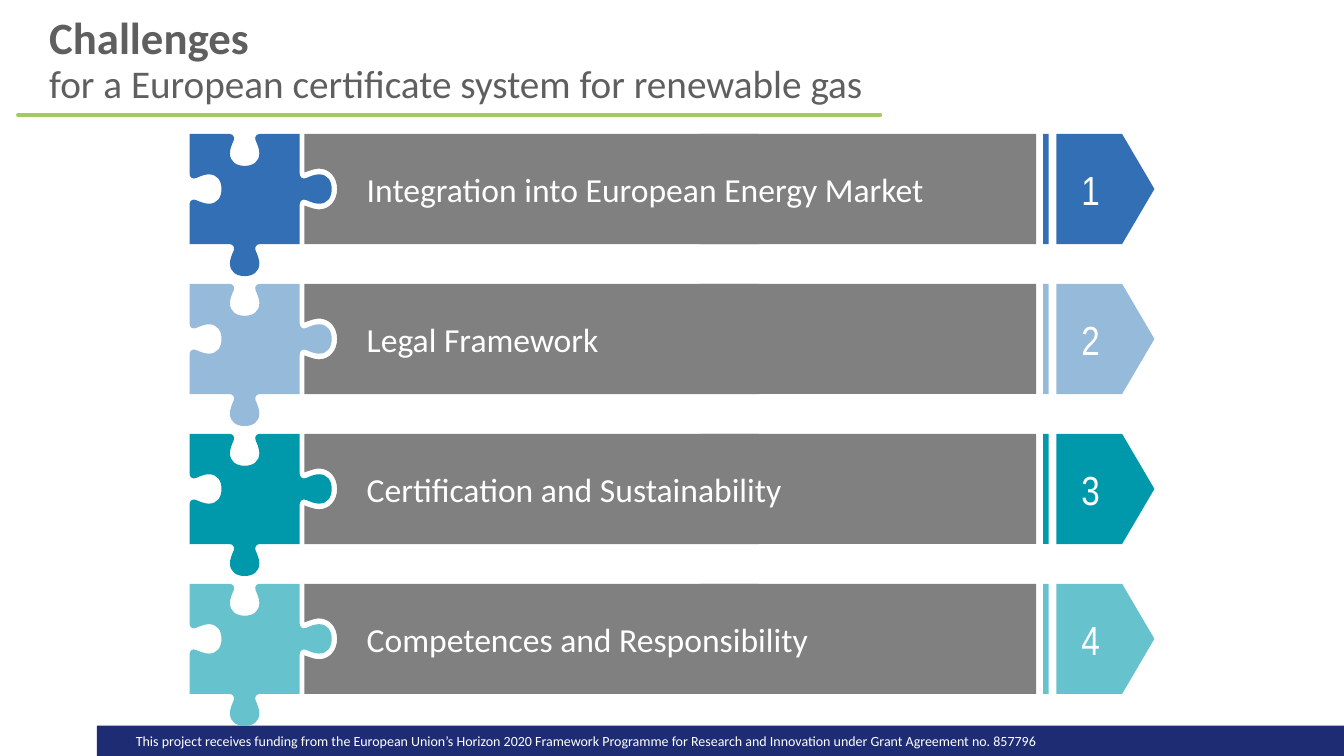
from lxml import etree
from pptx import Presentation
from pptx import util as u
from pptx.dml.color import RGBColor
from pptx.enum import shapes, text
from pptx.oxml.ns import qn

COLORS = {
    "blue": "336FB4", "light_blue": "96BADA", "teal": "0099AB", "aqua": "66C2CC",
    "bar": "808080", "white": "FFFFFF", "title": "5F5F5F", "rule": "A3C961",
    "footer": "1D2C73",
}
FORMATS = {
    "title": {"name": "Calibri", "size": u.Pt(32), "bold": True},
    "subtitle": {"name": "Calibri", "size": u.Pt(28), "bold": False},
    "label": {"name": "Calibri", "size": u.Pt(24)},
    "number": {"name": "Arial Narrow", "size": u.Pt(29)},
    "footer": {"name": "Calibri", "size": u.Pt(10)},
}
CHALLENGES = [
    ("Integration into European Energy Market", "blue"),
    ("Legal Framework", "light_blue"),
    ("Certification and Sustainability", "teal"),
    ("Competences and Responsibility", "aqua"),
]
FIRST_TOP, PITCH, SIDE = 95.7, 107.1, 78.7
PUZZLE_LEFT, BAR_LEFT, BAR_MIDDLE, BAR_RIGHT = 135.4, 217.4, 499.7, 740.2

# Half outlines as (along the edge, away from it): a start, then Bezier triples
KNOB = [(-10.8, 0), (-8.6, 0), (-6.8, 2), (-7.8, 4.5),
        (-9.2, 7.6), (-10.5, 11), (-10.5, 13.7),
        (-10.5, 19.8), (-6, 22.8), (0, 22.8)]
NOTCH = [(-11.8, 0), (-13, 3.6), (-14.6, 7.4), (-14.6, 10.3),
         (-14.6, 18), (-8.4, 23.4), (0, 23.4)]


def mirrored(half):
    return half + [(-along, out) for along, out in reversed(half[:-1])]


def paint(shape, color):
    shape.shadow.inherit = False
    shape.fill.solid()
    shape.fill.fore_color.rgb = RGBColor.from_string(COLORS[color])
    shape.line.fill.background()


def add_block(slide, kind, left, top, width, height, color):
    shape = slide.shapes.add_shape(kind, *map(u.Pt, (left, top, width, height)))
    paint(shape, color)
    return shape


def add_outline(slide, left, top, points, curve_starts, color):
    """Draw the points; each curve start is the first of three Bezier points."""
    corners = [(u.Pt(left + x), u.Pt(top + y)) for x, y in points]
    builder = slide.shapes.build_freeform(*corners[0])
    builder.add_line_segments(corners[1:], close=True)
    shape = builder.convert_to_shape()
    outline = next(shape._element.iter(qn("a:path")))
    segments = list(outline)
    for start in curve_starts:
        curve = etree.Element(qn("a:cubicBezTo"))
        segments[start].addprevious(curve)
        for segment in segments[start:start + 3]:
            curve.append(segment[0])
            outline.remove(segment)
    paint(shape, color)


def add_puzzle(slide, top, color):
    knob, middle = mirrored(KNOB), SIDE / 2
    points = [(0, 0)] + [(middle + t, h) for t, h in knob]
    points += [(SIDE, 0)] + [(SIDE + h, middle + t) for t, h in knob]
    points += [(SIDE, SIDE)] + [(middle - t, SIDE + h) for t, h in knob]
    points += [(0, SIDE)] + [(h, middle - t) for t, h in knob]
    per_side = len(knob) + 1
    curve_starts = [side * per_side + offset
                    for side in range(4) for offset in range(2, per_side, 3)]
    add_outline(slide, PUZZLE_LEFT, top, points, curve_starts, color)


def add_bar(slide, top):
    width = 324.7
    notch = [(h, SIDE / 2 + t) for t, h in mirrored(NOTCH)]
    points = [(0, 0)] + notch + [(0, SIDE), (width, SIDE), (width, 0)]
    add_outline(slide, BAR_LEFT, top, points, range(2, len(notch) + 1, 3), "bar")
    add_block(slide, shapes.MSO_SHAPE.RECTANGLE, BAR_MIDDLE, top,
              BAR_RIGHT - BAR_MIDDLE, SIDE, "bar")


def add_run(paragraph, words, style, color):
    run = paragraph.add_run()
    run.text = words
    for name, value in FORMATS[style].items():
        setattr(run.font, name, value)
    run.font.color.rgb = RGBColor.from_string(COLORS[color])


def add_text(slide, left, top, width, height, runs, color, anchor="MIDDLE", frame_format=None):
    box = slide.shapes.add_textbox(*map(u.Pt, (left, top, width, height)))
    frame = box.text_frame
    settings = {"word_wrap": True, "vertical_anchor": text.MSO_ANCHOR[anchor]}
    for name, value in (settings | (frame_format or {})).items():
        setattr(frame, name, value)
    paragraph = frame.paragraphs[0]
    for index, (words, style) in enumerate(runs):
        if index:
            paragraph.add_line_break()
        add_run(paragraph, words, style, color)
    return paragraph


def add_rule(slide, left, right, y):
    rule = slide.shapes.add_connector(
        shapes.MSO_CONNECTOR.STRAIGHT, *map(u.Pt, (left, y, right, y)))
    rule.line.color.rgb = RGBColor.from_string(COLORS["rule"])
    rule.line.width = u.Pt(3)
    properties = rule._element.spPr
    properties.find(qn("a:ln")).set("cap", "rnd")
    etree.SubElement(properties, qn("a:effectLst"))


def add_challenge(slide, number, label, top, color):
    add_bar(slide, top)
    add_puzzle(slide, top, color)
    add_block(slide, shapes.MSO_SHAPE.RECTANGLE, 745.2, top, 3.8, SIDE, color)
    arrow = add_block(slide, shapes.MSO_SHAPE.PENTAGON, 754.6, top, 70, SIDE, color)
    arrow.adjustments[0] = 0.33
    insets = {f"margin_{side}": u.Pt(7.2) for side in ("left", "top", "right", "bottom")}
    add_text(slide, 254.9, top + 21.3, 484, 36.7, [(label, "label")], "white",
             frame_format=insets)
    add_text(slide, 765.4, top + 18.5, 77.8, 41.8, [(str(number), "number")], "white",
             frame_format=insets)


def main():
    presentation = Presentation()
    presentation.slide_width, presentation.slide_height = u.Pt(960), u.Pt(540)
    slide = presentation.slides.add_slide(presentation.slide_layouts[6])

    # Footer
    add_block(slide, shapes.MSO_SHAPE.RECTANGLE, 69.1, 518.4, 890.9, 21.6, "footer")
    add_text(slide, 74.9, 519.8, 689, 19.4,
             [("This project receives funding from the European Union’s Horizon 2020 Framework "
               "Programme for Research and Innovation under Grant Agreement no. 857796", "footer")],
             "white", "TOP", {"margin_left": u.Pt(22.2)})

    # Title
    add_rule(slide, 13, 628.6, 82.1)
    title = add_text(slide, 28.1, 25.9, 645.8, 54,
                     [("Challenges", "title"),
                      ("for a European certificate system for renewable gas", "subtitle")],
                     "title", "BOTTOM")
    title.line_spacing = 0.9

    # Challenges
    for index, (label, color) in enumerate(CHALLENGES):
        add_challenge(slide, index + 1, label, FIRST_TOP + index * PITCH, color)

    presentation.save("out.pptx")


if __name__ == "__main__":
    main()
